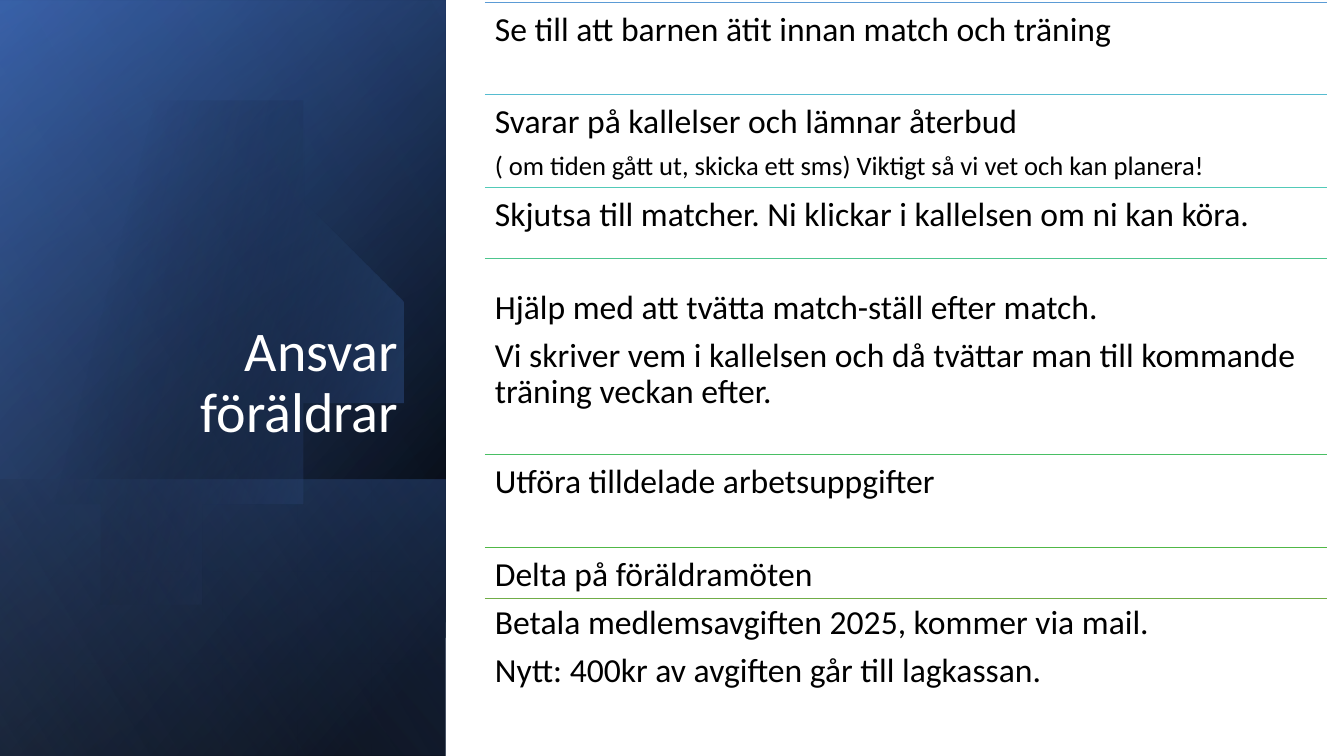
from lxml.etree import SubElement
from pptx import Presentation
from pptx.dml.color import RGBColor
from pptx.enum.shapes import MSO_CONNECTOR, MSO_SHAPE
from pptx.enum.text import MSO_ANCHOR, MSO_AUTO_SIZE, PP_ALIGN
from pptx.oxml.ns import qn
from pptx.util import Inches, Pt

COLORS = {
    "black": "000000", "white": "FFFFFF", "navy": "2F5597",
    "blue": "4472C4", "pale": "8FAADC",
}
TITLE = "Ansvar föräldrar"
DUTIES = [
    (0.02, 0.92, [("Se till att barnen ätit innan match och träning", 24)]),
    (0.94, 0.92, [
        ("Svarar på kallelser och lämnar återbud", 24),
        ("( om tiden gått ut, skicka ett sms) Viktigt så vi vet och kan planera!", 19),
    ]),
    (1.86, 0.92, [("Skjutsa till matcher. Ni klickar i kallelsen om ni kan köra.", 24)]),
    (2.78, 1.73, [
        ("Hjälp med att tvätta match-ställ efter match.", 24),
        ("Vi skriver vem i kallelsen och då tvättar man till kommande träning veckan efter.", 24),
    ]),
    (4.51, 0.92, [("Utföra tilldelade arbetsuppgifter", 24)]),
    (5.43, 0.92, [
        ("Delta på föräldramöten", 24),
        ("Betala medlemsavgiften 2025, kommer via mail.", 24),
        ("Nytt: 400kr av avgiften går till lagkassan.", 24),
    ]),
]
DIVIDERS = [
    (0.02, "5B9BD5"), (0.94, "56BCD0"), (1.86, "52CAB8"), (2.56, "4DC58D"),
    (4.51, "49BF64"), (5.43, "50B846"), (5.94, "70AD47"),
]
LIST_LEFT, LIST_WIDTH = 4.81, 8.35

FULL_PANEL = (-1.54, 1.54, 7.5, 4.42)
LOWER_PANELS = [
    (FULL_PANEL, 50, [(8, "black", 100), (100, "navy", 100)]),
    ((-1.54, 1.55, 7.5, 4.42), 30, [(0, "black", 0), (99, "blue", 46)]),
    ((0.84, 3.92, 2.74, 4.42), 130, [(2, "blue", 29), (100, "black", 30)]),
]
UPPER_PANELS = [(FULL_PANEL, 120, [(0, "black", 0), (99, "pale", 11)])]

DISC_START = (1.49, 1.1)
DISC_SEGMENTS = [
    [(2.46, 1.12), (3.35, 1.77), (3.63, 2.75)],
    [(3.98, 3.97), (3.28, 5.23), (2.07, 5.58)],
    [(1.31, 5.8), (0.53, 5.61), (-0.03, 5.14)],
    [(-0.15, 5.03)],
    [(-0.15, 1.75)],
    [(0, 1.61)],
    [(0.23, 1.42), (0.5, 1.28), (0.8, 1.19)],
    [(1.03, 1.13), (1.26, 1.1), (1.49, 1.1)],
]
DISC_STOPS = [(29, "black", 0), (100, "blue", 43)]
CURVE_STEPS = 24


def apply_gradient(shape, angle, stops):
    shape.shadow.inherit = False
    shape.line.fill.background()
    shape.fill.gradient()
    shape.fill.gradient_angle = 360 - angle
    for stop, (position, color, _) in zip(shape.fill.gradient_stops, stops):
        stop.position = position / 100
        stop.color.rgb = RGBColor.from_string(COLORS[color])
    color_elements = shape._element.spPr.iter(qn("a:srgbClr"))
    for element, (_, _, opacity) in zip(color_elements, stops):
        if opacity < 100:
            SubElement(element, qn("a:alpha"), val=str(opacity * 1000))


def add_panels(slide, panels):
    for box, angle, stops in panels:
        panel = slide.shapes.add_shape(MSO_SHAPE.RECTANGLE, *map(Inches, box))
        panel.rotation = 90
        panel._element.spPr.xfrm.set("flipH", "1")
        apply_gradient(panel, angle, stops)


def curve_points(start, controls):
    if len(controls) == 1:
        return controls
    points = []
    for step in range(1, CURVE_STEPS + 1):
        t = step / CURVE_STEPS
        weights = ((1 - t) ** 3, 3 * t * (1 - t) ** 2, 3 * t * t * (1 - t), t ** 3)
        points.append(tuple(
            sum(weight * value for weight, value in zip(weights, axis))
            for axis in zip(start, *controls)
        ))
    return points


def add_disc(slide):
    builder = slide.shapes.build_freeform(*DISC_START, scale=Inches(1))
    start = DISC_START
    for controls in DISC_SEGMENTS:
        builder.add_line_segments(curve_points(start, controls), close=False)
        start = controls[-1]
    builder.add_line_segments([], close=True)
    apply_gradient(builder.convert_to_shape(), 14, DISC_STOPS)


def write(paragraph, text, size, color):
    run = paragraph.add_run()
    run.text = text
    for name, value in {"name": "Calibri", "size": Pt(size)}.items():
        setattr(run.font, name, value)
    run.font.color.rgb = RGBColor.from_string(COLORS[color])
    paragraph.line_spacing = 0.9


def add_title(slide):
    title = slide.shapes.title
    box = {"left": 0.64, "top": 1.84, "width": 3.41, "height": 2.62}
    for name, value in box.items():
        setattr(title, name, Inches(value))
    frame = title.text_frame
    frame.word_wrap = True
    frame.auto_size = MSO_AUTO_SIZE.NONE
    frame.vertical_anchor = MSO_ANCHOR.BOTTOM
    paragraph = frame.paragraphs[0]
    paragraph.alignment = PP_ALIGN.RIGHT
    write(paragraph, TITLE, 40, "white")
    slide.shapes._spTree.append(title._element)


def add_divider(slide, top, color):
    line = slide.shapes.add_connector(
        MSO_CONNECTOR.STRAIGHT, Inches(LIST_LEFT), Inches(top),
        Inches(LIST_LEFT + LIST_WIDTH), Inches(top))
    line.line.width = Pt(0.5)
    line.line.color.rgb = RGBColor.from_string(color)
    SubElement(line._element.spPr, qn("a:effectLst"))


def add_duty(slide, top, height, lines):
    box = slide.shapes.add_textbox(*map(Inches, (LIST_LEFT, top, LIST_WIDTH, height)))
    frame = box.text_frame
    frame.word_wrap = True
    for side in ("left", "top", "right", "bottom"):
        setattr(frame, f"margin_{side}", Inches(0.1))
    for index, (text, size) in enumerate(lines):
        paragraph = frame.add_paragraph() if index else frame.paragraphs[0]
        write(paragraph, text, size, "black")
        spacing = SubElement(paragraph._p.get_or_add_pPr(), qn("a:spcAft"))
        SubElement(spacing, qn("a:spcPct"), val="35000")


def main():
    presentation = Presentation()
    presentation.slide_width = Inches(13.33)
    presentation.slide_height = Inches(7.5)
    slide = presentation.slides.add_slide(presentation.slide_layouts[5])
    add_panels(slide, LOWER_PANELS)
    add_disc(slide)
    add_panels(slide, UPPER_PANELS)
    add_title(slide)
    for divider in DIVIDERS:
        add_divider(slide, *divider)
    for duty in DUTIES:
        add_duty(slide, *duty)
    presentation.save("out.pptx")


if __name__ == "__main__":
    main()
